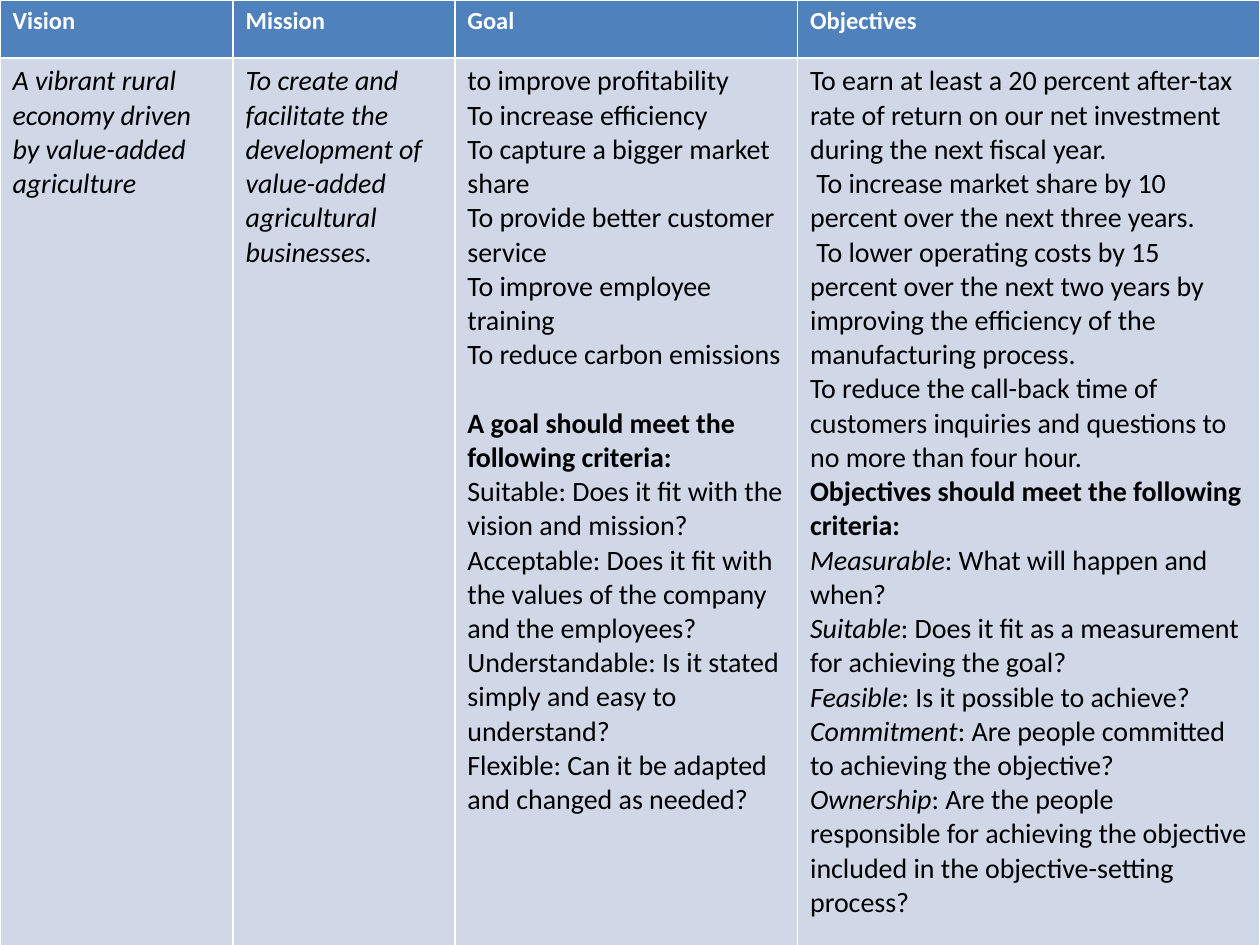
from pptx import Presentation
from pptx.dml.color import RGBColor
from pptx.util import Inches, Pt


def paint(cell, back):
    cell.fill.solid()
    cell.fill.fore_color.rgb = RGBColor.from_string(back)


def write(para, text, size, color, bold=False, italic=False):
    run = para.add_run()
    run.text = text
    font = run.font
    font.name = "Calibri"
    font.size = Pt(size)
    font.color.rgb = RGBColor.from_string(color)
    font.bold = bold
    font.italic = italic


vision = [("i", "A vibrant rural economy driven by value-added agriculture")]
mission = [("i", "To create and facilitate the development of value-added agricultural businesses.")]
goals = [
    ("", "to improve profitability"),
    ("", "To increase efficiency"),
    ("", "To capture a bigger market share"),
    ("", "To provide better customer service"),
    ("", "To improve employee training"),
    ("", "To reduce carbon emissions"),
    ("b", "A goal should meet the following criteria:"),
    ("", "Suitable: Does it fit with the vision and mission?"),
    ("", "Acceptable: Does it fit with the values of the company and the employees?"),
    ("", "Understandable: Is it stated simply and easy to understand?"),
    ("", "Flexible: Can it be adapted and changed as needed?"),
]
aims = [
    ("", "To earn at least a 20 percent after-tax rate of return on our net investment during the next fiscal year."),
    ("", " To increase market share by 10 percent over the next three years."),
    ("", " To lower operating costs by 15 percent over the next two years by improving the efficiency of the manufacturing process."),
    ("", "To reduce the call-back time of customers inquiries and questions to no more than four hour."),
    ("b", "Objectives should meet the following criteria:"),
    ("term", "Measurable: What will happen and when?"),
    ("term", "Suitable: Does it fit as a measurement for achieving the goal?"),
    ("term", "Feasible: Is it possible to achieve?"),
    ("term", "Commitment: Are people committed to achieving the objective?"),
    ("term", "Ownership: Are the people responsible for achieving the objective included in the objective-setting process?"),
]
columns = [
    ("Vision", 1.85, vision),
    ("Mission", 1.76, mission),
    ("Goal", 2.72, goals),
    ("Objectives", 3.67, aims),
]

deck = Presentation()
deck.slide_width = Inches(10)
deck.slide_height = Inches(7.5)
slide = deck.slides.add_slide(deck.slide_layouts[6])

table = slide.shapes.add_table(2, 4, 0, 0, Inches(10), Inches(8.33)).table
table.rows[0].height = Inches(0.46)
table.rows[1].height = Inches(7.86)

for col, (title, width, lines) in enumerate(columns):
    table.columns[col].width = Inches(width)
    head = table.cell(0, col)
    paint(head, "4F81BD")
    write(head.text_frame.paragraphs[0], title, 14, "FFFFFF", bold=True)

    body = table.cell(1, col)
    paint(body, "D0D8E8")
    frame = body.text_frame
    for row, (style, text) in enumerate(lines):
        para = frame.add_paragraph() if row else frame.paragraphs[0]
        if style == "term":
            term, rest = text.split(":")
            write(para, term, 16, "000000", italic=True)
            write(para, ":" + rest, 16, "000000")
        else:
            write(para, text, 16, "000000", style == "b", style == "i")
        if style == "b" and title == "Goal":
            para.space_before = Pt(19.5)

deck.save("out.pptx")
